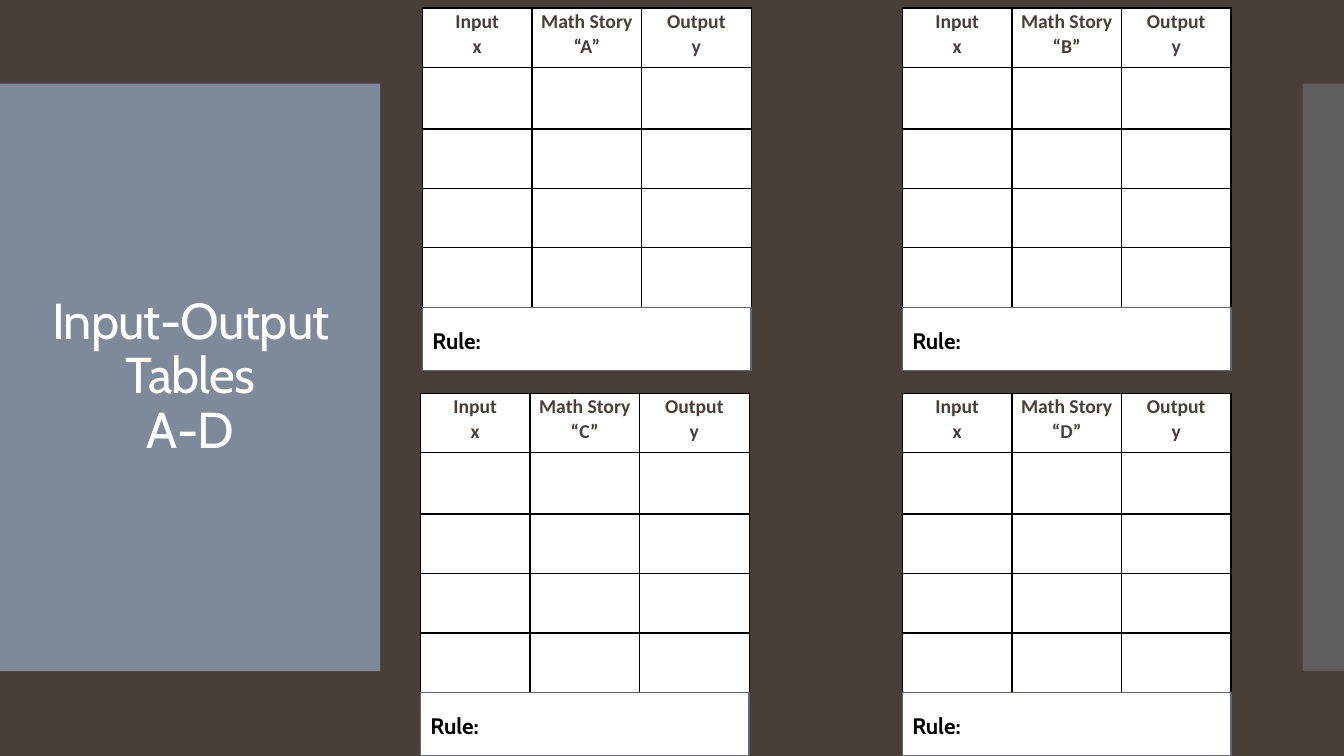
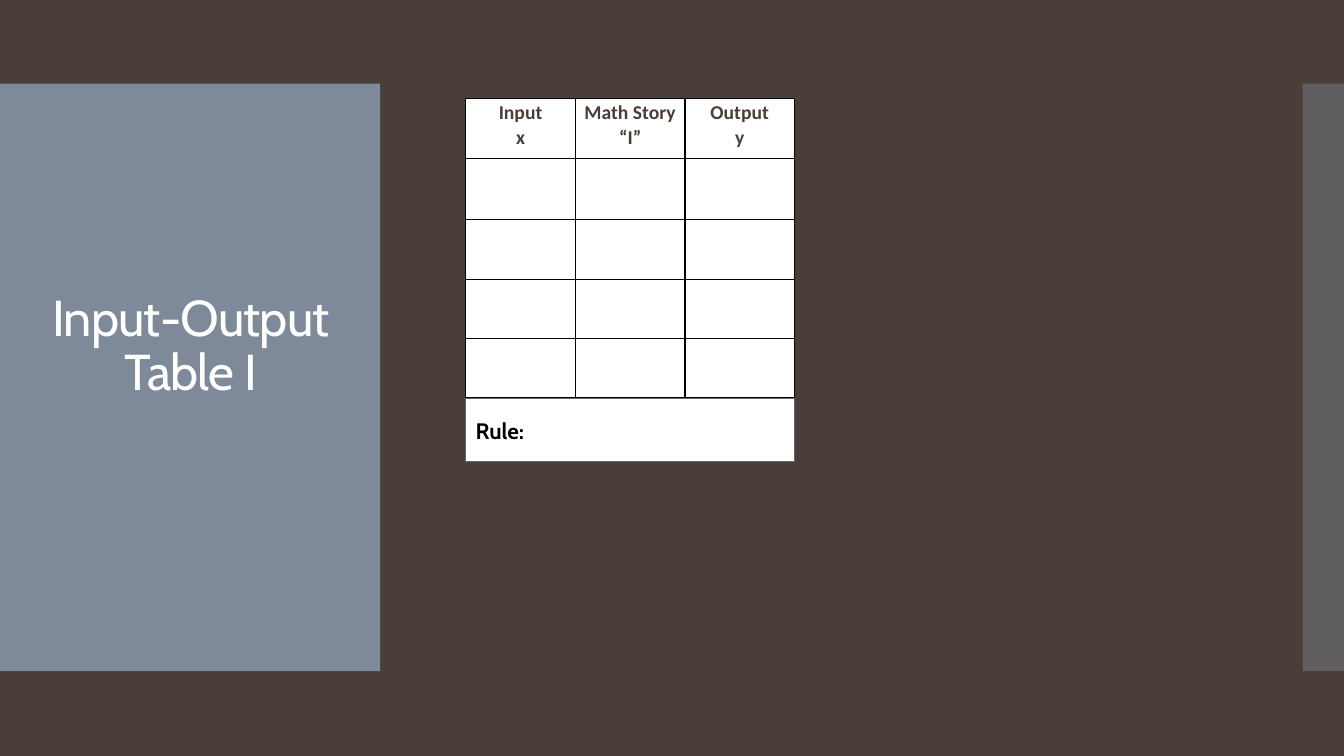
from dataclasses import dataclass

from lxml.etree import SubElement
from pptx import Presentation
from pptx.dml.color import RGBColor as Rgb
from pptx.enum.shapes import MSO_SHAPE as Preset
from pptx.enum.text import MSO_ANCHOR as Anchor, MSO_AUTO_SIZE as AutoSize, PP_ALIGN as Align
from pptx.oxml.ns import qn
from pptx.presentation import Presentation as Deck
from pptx.shapes.autoshape import Shape
from pptx.slide import Slide, SlideLayout
from pptx.table import _Cell as Cell
from pptx.text.text import TextFrame
from pptx.util import Inches, Pt


@dataclass(frozen=True)
class Theme:
    brown: str = "4A3F38"
    slate: str = "818E9F"
    slate_edge: str = "5F6976"
    white: str = "FFFFFF"
    black: str = "000000"
    main_font: str = "Cabin"
    table_font: str = "Calibri"
    title_size: int = 36
    rule_size: int = 16
    header_size: int = 14
    title_tracking: int = -60  # hundredths of a point
    body_spacing: float = 1.07


@dataclass(frozen=True)
class Band:
    left: float
    width: float
    opacity: int


@dataclass(frozen=True)
class MathTable:
    letter: str
    left: float
    top: float


@dataclass(frozen=True)
class Page:
    title: str
    tables: tuple[MathTable, ...]
    title_bottom_inset: float = 0.05


THEME = Theme()
BAND_TOP, BAND_HEIGHT = 0.83, 5.83
BANDS = (Band(0, 3.77, 95), Band(12.92, 0.42, 40))
TABLE_WIDTH, RULE_HEIGHT = 3.26, 0.63
ROW_HEIGHTS = (0.59, 0.61, 0.59, 0.59, 0.59)
TABLE_HEIGHT = sum(ROW_HEIGHTS)

PAGES = (
    Page("Input-Output Tables\nA-D", (
        MathTable("A", 4.19, 0.08), MathTable("B", 8.95, 0.08),
        MathTable("C", 4.17, 3.9), MathTable("D", 8.95, 3.9))),
    Page("Input-Output Table I", (MathTable("I", 4.62, 0.98),), title_bottom_inset=0.65),
)


def write_text(frame: TextFrame, *lines: str, size: int, font: str, color: str,
               bold: bool = False, align: Align = Align.LEFT,
               spacing: float = THEME.body_spacing, after: float = 0) -> None:
    """Write one paragraph per line; a newline inside a line is a soft break."""
    for index, line in enumerate(lines):
        para = frame.add_paragraph() if index else frame.paragraphs[0]
        para.text = line
        para.alignment = align
        para.line_spacing = spacing
        para.space_after = Pt(after)
        for span in para.runs:
            span.font.size = Pt(size)
            span.font.name = font
            span.font.bold = bold
            span.font.color.rgb = Rgb.from_string(color)


def add_rect(page: Slide, left: float, top: float, width: float, height: float,
             fill: str) -> Shape:
    box = page.shapes.add_shape(Preset.RECTANGLE, Inches(left), Inches(top),
                                Inches(width), Inches(height))
    box.shadow.inherit = False
    box.fill.solid()
    box.fill.fore_color.rgb = Rgb.from_string(fill)
    box.line.fill.background()
    return box


# Shared look: background, title size and side bands
def style_master(deck: Deck) -> None:
    master = deck.slide_master
    master.background.fill.solid()
    master.background.fill.fore_color.rgb = Rgb.from_string(THEME.brown)
    style = master.element.find(f".//{qn('p:titleStyle')}/{qn('a:lvl1pPr')}/{qn('a:defRPr')}")
    style.set("sz", str(THEME.title_size * 100))


def move_bands_to_layout(page: Slide, layout: SlideLayout) -> None:
    """Draw the bands on a page, then hand them to the layout all pages use."""
    for band in BANDS:
        box = add_rect(page, band.left, BAND_TOP, band.width, BAND_HEIGHT, THEME.slate)
        color = box.element.spPr.find(f"{qn('a:solidFill')}/{qn('a:srgbClr')}")
        SubElement(color, qn("a:alpha"), val=str(band.opacity * 1000))
        layout.shapes.element.append(box.element)


def set_title(page: Slide, text: str, bottom_inset: float) -> None:
    title = page.shapes.title
    title.left, title.top = Inches(0.28), Inches(1.23)
    title.width, title.height = Inches(3.22), Inches(5.03)
    frame = title.text_frame
    frame.word_wrap = True
    frame.auto_size = AutoSize.NONE
    frame.vertical_anchor = Anchor.MIDDLE
    frame.margin_bottom = Inches(bottom_inset)
    write_text(frame, text, size=THEME.title_size, font=THEME.main_font,
               color=THEME.white, align=Align.CENTER, spacing=0.9)
    for properties in title.element.iter(qn("a:rPr")):
        properties.set("spc", str(THEME.title_tracking))


# Input-output table with its rule box
def format_cell(cell: Cell) -> None:
    properties = cell._tc.get_or_add_tcPr()
    for side in ("lnL", "lnR", "lnT", "lnB"):
        border = SubElement(properties, qn(f"a:{side}"), w=str(Pt(1)))
        fill = SubElement(border, qn("a:solidFill"))
        SubElement(fill, qn("a:srgbClr"), val=THEME.black)
    cell.fill.solid()
    cell.fill.fore_color.rgb = Rgb.from_string(THEME.white)
    cell.margin_left = cell.margin_right = Inches(0.07)
    cell.margin_top = cell.margin_bottom = 0


def add_math_table(page: Slide, item: MathTable) -> None:
    headers = (("Input", "x"), ("Math Story", f"“{item.letter}”"), ("Output", "y"))
    table = page.shapes.add_table(
        len(ROW_HEIGHTS), len(headers), Inches(item.left), Inches(item.top),
        Inches(TABLE_WIDTH), Inches(TABLE_HEIGHT)).table
    table.first_row = table.horz_banding = False
    for row, height in zip(table.rows, ROW_HEIGHTS):
        row.height = Inches(height)
    for cell in table.iter_cells():
        format_cell(cell)
    for column, lines in enumerate(headers):
        write_text(table.cell(0, column).text_frame, *lines, size=THEME.header_size,
                   font=THEME.table_font, color=THEME.brown, bold=True, align=Align.CENTER)

    rule = add_rect(page, item.left, item.top + TABLE_HEIGHT, TABLE_WIDTH, RULE_HEIGHT,
                    THEME.white)
    rule.line.color.rgb = Rgb.from_string(THEME.slate_edge)
    rule.line.width = Pt(0.85)
    rule.text_frame.word_wrap = True
    rule.text_frame.vertical_anchor = Anchor.MIDDLE
    write_text(rule.text_frame, "Rule:", size=THEME.rule_size, font=THEME.main_font,
               color=THEME.black, bold=True, after=8)


def main() -> None:
    deck = Presentation()
    deck.slide_width, deck.slide_height = Inches(13.33), Inches(7.5)
    style_master(deck)
    layout = deck.slide_layouts.get_by_name("Title Only")
    for number, content in enumerate(PAGES):
        page = deck.slides.add_slide(layout)
        if number == 0:
            move_bands_to_layout(page, layout)
        set_title(page, content.title, content.title_bottom_inset)
        for item in content.tables:
            add_math_table(page, item)
    deck.save("out.pptx")


if __name__ == "__main__":
    main()
